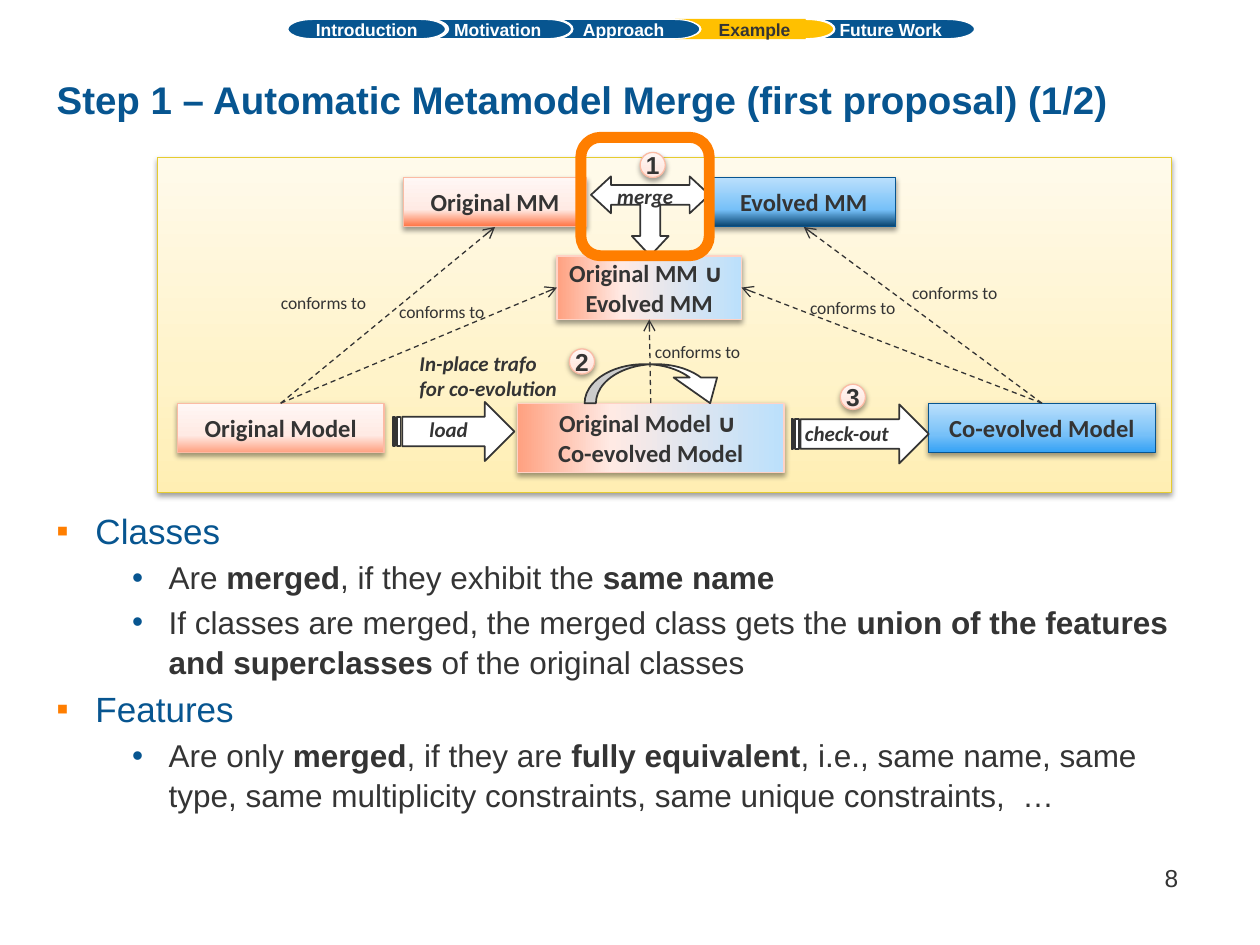
from pptx import Presentation
from pptx.dml.color import RGBColor
from pptx.enum.dml import MSO_LINE
from pptx.enum.shapes import MSO_CONNECTOR, MSO_SHAPE
from pptx.enum.text import MSO_ANCHOR, PP_ALIGN
from pptx.oxml import parse_xml
from pptx.oxml.ns import nsdecls, qn
from pptx.util import Pt

BLUE = RGBColor(0x07, 0x55, 0x90)
ORANGE = RGBColor(0xFF, 0x7E, 0x00)
YELLOW = RGBColor(0xFF, 0xC0, 0x00)
DARK = RGBColor(0x34, 0x34, 0x34)
WHITE = RGBColor(0xFF, 0xFF, 0xFF)
ROSE = RGBColor(0xFB, 0xBB, 0xA4)
PINK = RGBColor(0xFF, 0xD2, 0xC5)
GOLD = RGBColor(0xE6, 0xCC, 0x2F)

# Gradients: three colours at 0, 35 and 100 %, then the angle
PANEL = ("FFEEB3", "FFF3C9", "FFFAEB", 270)
RED = ("FF7140", "FFEAE4", "FFF7F5", 270)
NAVY = ("05406C", "76C0F8", "BBE0FC", 270)
SALMON = ("FFA080", "FFEAE4", "FFF7F5", 270)
SKY = ("32A1F5", "76C0F8", "BBE0FC", 270)
MIXED = ("FFA080", "FFEAE4", "BBE0FC", 0)
PALE = ("FFE2DA", "FFEAE4", "FFF7F5", 270)

BOX_FONT = dict(name="Calibri", size=Pt(14), bold=True)
LABEL_FONT = dict(name="Calibri", size=Pt(12), bold=True, italic=True)
SMALL_FONT = dict(name="Calibri", size=Pt(10))
BADGE_FONT = dict(name="Arial", size=Pt(14), bold=True)
NAV_FONT = dict(name="Arial", size=Pt(10), bold=True)


def set_attrs(obj, values):
    for name, value in values.items():
        setattr(obj, name, value)


def format_runs(p, fmt, color=DARK):
    for r in p.runs:
        set_attrs(r.font, fmt)
        r.font.color.rgb = color


def add_shape(slide, kind, at, fill=None, line=None, width=0.75):
    sp = slide.shapes.add_shape(kind, *map(Pt, at))
    sp.shadow.inherit = False
    if fill is None:
        sp.fill.background()
    else:
        sp.fill.solid()
        sp.fill.fore_color.rgb = fill
    if line is None:
        sp.line.fill.background()
    else:
        sp.line.color.rgb = line
        sp.line.width = Pt(width)
    return sp


def add_glossy(slide, kind, at, gradient, line):
    """Shape with a gradient fill and a soft shadow below it."""
    sp = add_shape(slide, kind, at, line=line)
    *colors, angle = gradient
    stops = "".join(f'<a:gs pos="{pos}000"><a:srgbClr val="{c}"/></a:gs>'
                    for pos, c in zip((0, 35, 100), colors))
    spPr = sp._element.spPr
    spPr.replace(spPr.find(qn("a:noFill")), parse_xml(
        f'<a:gradFill {nsdecls("a")} rotWithShape="1"><a:gsLst>{stops}</a:gsLst>'
        f'<a:lin ang="{angle * 60000}" scaled="0"/></a:gradFill>'))
    spPr.find(qn("a:effectLst")).append(parse_xml(
        f'<a:outerShdw {nsdecls("a")} blurRad="{Pt(3.1)}" dist="{Pt(1.6)}" dir="5400000" '
        'rotWithShape="0"><a:srgbClr val="000000"><a:alpha val="38000"/></a:srgbClr></a:outerShdw>'))
    return sp


def set_center_text(sp, text, fmt, color=DARK):
    tf = sp.text_frame
    set_attrs(tf, dict(word_wrap=False, vertical_anchor=MSO_ANCHOR.MIDDLE, margin_left=0,
                       margin_right=0, margin_top=0, margin_bottom=0))
    p = tf.paragraphs[0]
    p.text = text
    p.alignment = PP_ALIGN.CENTER
    format_runs(p, fmt, color)


def add_box(slide, text, at, gradient, line):
    sp = add_glossy(slide, MSO_SHAPE.RECTANGLE, at, gradient, line)
    set_center_text(sp, text, BOX_FONT)
    return sp


def add_badge(slide, number, x, y):
    sp = add_glossy(slide, MSO_SHAPE.OVAL, (x, y, 14.4, 14.4), PALE, ROSE)
    set_center_text(sp, number, BADGE_FONT)


def add_label(slide, text, at, fmt, align=PP_ALIGN.LEFT):
    tf = slide.shapes.add_textbox(*map(Pt, at)).text_frame
    tf.word_wrap = True
    tf.text = text
    for p in tf.paragraphs:
        p.alignment = align
        format_runs(p, fmt)


def add_conformance(slide, model, metamodel, side):
    """Dashed arrow from the top of a model to a side of its metamodel."""
    c = slide.shapes.add_connector(MSO_CONNECTOR.STRAIGHT, 0, 0, 0, 0)
    c.begin_connect(model, 0)
    c.end_connect(metamodel, side)
    set_attrs(c.line, dict(width=Pt(0.75), dash_style=MSO_LINE.DASH))
    c.line.color.rgb = DARK
    spPr = c._element.spPr
    spPr.find(qn("a:ln")).append(parse_xml(f'<a:tailEnd {nsdecls("a")} type="arrow"/>'))
    spPr.append(parse_xml(f'<a:effectLst {nsdecls("a")}/>'))


def add_arrow(slide, kind, at, adjustments=()):
    sp = add_shape(slide, kind, at, WHITE, DARK, 1)
    for i, value in enumerate(adjustments):
        sp.adjustments[i] = value
    return sp


def add_nav(slide, text, x, width, kind=MSO_SHAPE.FLOWCHART_STORED_DATA, active=False):
    sp = add_shape(slide, kind, (x, 10.8, width, 11.6),
                   YELLOW if active else BLUE, None if active else WHITE, 1.25)
    sp._element.spPr.xfrm.set("flipH", "1")
    set_center_text(sp, text, NAV_FONT, DARK if active else WHITE)


def add_title(slide, text):
    sp = slide.shapes.title
    set_attrs(sp, dict(left=Pt(25.2), top=Pt(12.2), width=Pt(671.8), height=Pt(61.2)))
    sp.text_frame.vertical_anchor = MSO_ANCHOR.BOTTOM
    p = sp.text_frame.paragraphs[0]
    p.text = text
    p.alignment = PP_ALIGN.LEFT
    format_runs(p, dict(name="Arial", size=Pt(22), bold=True), BLUE)


def add_bullets(slide, items):
    """Items are (level, text); parts between asterisks are bold."""
    styles = [(22.3, -22.3, "▪", ORANGE, 20, BLUE), (64.1, -20.9, "•", BLUE, 18, DARK)]
    tf = slide.shapes.add_textbox(Pt(25.2), Pt(286.6), Pt(671.8), Pt(185.8)).text_frame
    tf.word_wrap = True
    for i, (level, text) in enumerate(items):
        margin, indent, bullet, bullet_color, size, color = styles[level]
        p = tf.add_paragraph() if i else tf.paragraphs[0]
        pPr = p._p.get_or_add_pPr()
        pPr.set("marL", str(Pt(margin)))
        pPr.set("indent", str(Pt(indent)))
        pPr.append(parse_xml(f'<a:buClr {nsdecls("a")}><a:srgbClr val="{bullet_color}"/></a:buClr>'))
        pPr.append(parse_xml(f'<a:buFont {nsdecls("a")} typeface="Arial"/>'))
        pPr.append(parse_xml(f'<a:buChar {nsdecls("a")} char="{bullet}"/>'))
        set_attrs(p, dict(level=level, line_spacing=1.05, space_before=Pt(size * 0.15 if i else 0)))
        for n, part in enumerate(text.split("*")):
            p.add_run().text = part
            p.runs[-1].font.bold = n % 2 == 1
        format_runs(p, dict(name="Arial", size=Pt(size)), color)


def add_diagram(slide):
    add_glossy(slide, MSO_SHAPE.RECTANGLE, (90, 90, 579.6, 191.5), PANEL, GOLD)

    # Metamodels and models
    original_mm = add_box(slide, "Original MM", (230.4, 101.4, 105, 28.3), RED, ROSE)
    evolved_mm = add_box(slide, "Evolved MM", (406.8, 101.4, 105, 28.3), NAVY, BLUE)
    merged_mm = add_box(slide, "Original MM ∪ \vEvolved MM", (318.3, 146.2, 105.4, 36.3), MIXED, PINK)
    original = add_box(slide, "Original Model", (101.4, 230.4, 118, 28.3), SALMON, ROSE)
    merged = add_box(slide, "Original Model ∪ \vCo-evolved Model", (295.7, 230.4, 152.3, 39.6), MIXED, PINK)
    evolved = add_box(slide, "Co-evolved Model", (530.6, 230.4, 129.6, 28.3), SKY, BLUE)

    # Conformance links (sides: 1 left, 2 bottom, 3 right)
    for model, metamodel, side in [(original, original_mm, 2), (original, merged_mm, 1),
                                   (merged, merged_mm, 2), (evolved, merged_mm, 3),
                                   (evolved, evolved_mm, 2)]:
        add_conformance(slide, model, metamodel, side)
    for x, y in [(153.4, 163.4), (221, 168.5), (514.1, 157.7), (455.8, 166.3), (367.2, 191.5)]:
        add_label(slide, "conforms to", (x, y, 84.2, 19.4), SMALL_FONT)

    # Operation arrows
    add_arrow(slide, MSO_SHAPE.STRIPED_RIGHT_ARROW, (224.6, 229.7, 69.4, 33.8))
    add_arrow(slide, MSO_SHAPE.STRIPED_RIGHT_ARROW, (452.2, 231.1, 78.5, 33.8))
    add_arrow(slide, MSO_SHAPE.CURVED_DOWN_ARROW, (334.1, 208.1, 84.2, 22.3), (0.29, 1.115, 0.658))
    merge = add_arrow(slide, MSO_SHAPE.LEFT_RIGHT_UP_ARROW, (337.7, 100.8, 67.7, 45.4), (0.25, 0.232, 0.25))
    merge.rotation = 180
    for text, at in [("load", (238.3, 234.7, 46.8, 21.6)), ("check-out", (452.9, 236.9, 84.2, 21.6)),
                     ("merge", (345.6, 101.5, 56.2, 21.6)),
                     ("In-place trafo\nfor co-evolution", (232.6, 196.6, 108.7, 36))]:
        add_label(slide, text, at, LABEL_FONT)

    # Step numbers and the highlighted step
    for number, x, y in [("1", 365.8, 87.1), ("2", 325.4, 199.4), ("3", 480.2, 219.6)]:
        add_badge(slide, number, x, y)
    add_shape(slide, MSO_SHAPE.ROUNDED_RECTANGLE, (331.9, 78.5, 73.4, 67.7), line=ORANGE, width=6.25)


def main():
    prs = Presentation()
    prs.slide_width, prs.slide_height = Pt(720), Pt(540)
    slide = prs.slides.add_slide(prs.slide_layouts[5])
    add_title(slide, "Step 1 – Automatic Metamodel Merge (first proposal) (1/2)")
    add_bullets(slide, [
        (0, "Classes"),
        (1, "Are *merged*, if they exhibit the *same name*"),
        (1, "If classes are merged, the merged class gets the "
            "*union of the features and superclasses *of the original classes"),
        (0, "Features"),
        (1, "Are only *merged*, if they are *fully equivalent*, i.e., same name, same type, "
            "same multiplicity constraints, same unique constraints,  …")])
    add_label(slide, "8", (596.2, 489.6, 84.2, 36), dict(name="Arial", size=Pt(14)), PP_ALIGN.RIGHT)
    add_diagram(slide)

    # Navigation bar
    add_nav(slide, "Approach", 312.5, 87.8)
    add_nav(slide, "Motivation", 241.9, 85)
    add_nav(slide, "Introduction", 164.2, 90.7, MSO_SHAPE.FLOWCHART_TERMINATOR)
    add_nav(slide, "Example", 385.9, 90.7, active=True)
    add_nav(slide, "Future Work", 460.8, 96.5)
    prs.save("out.pptx")


if __name__ == "__main__":
    main()
